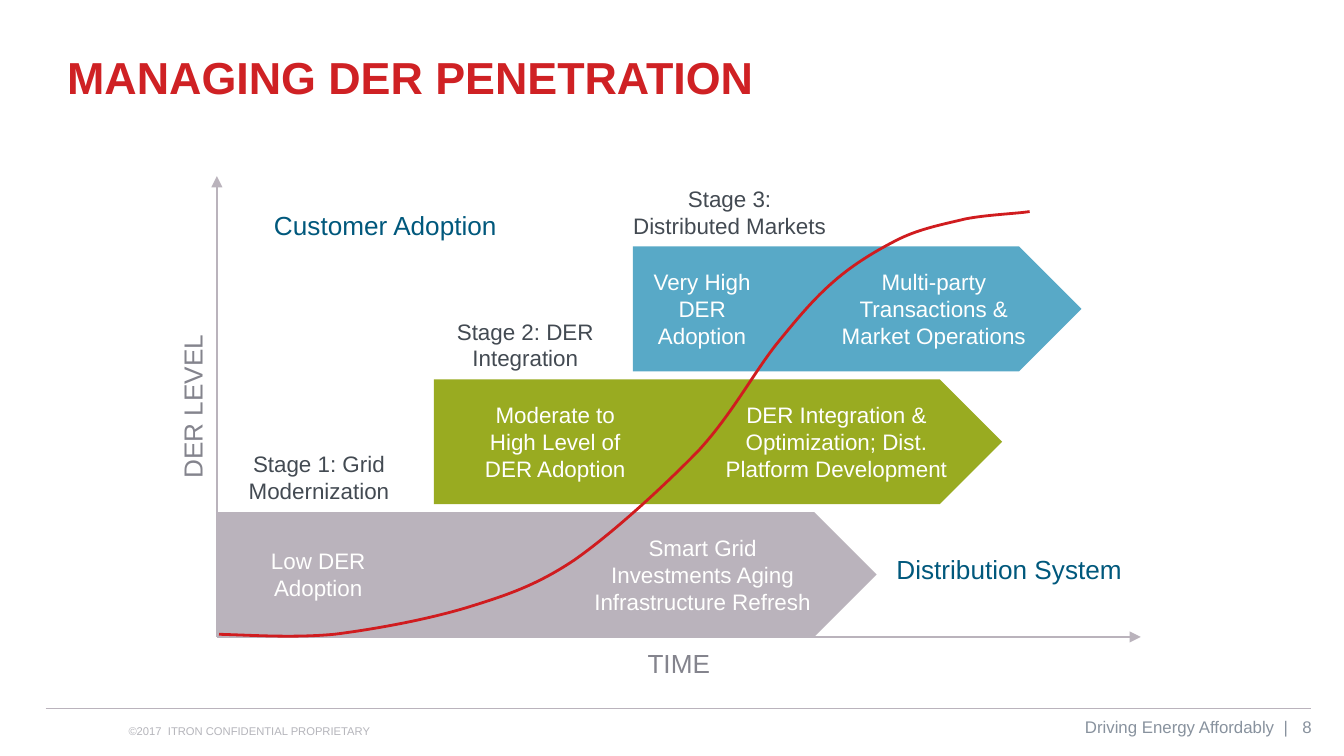
from lxml.etree import SubElement
from pptx import Presentation
from pptx.dml.color import RGBColor
from pptx.enum.shapes import MSO_CONNECTOR, MSO_SHAPE
from pptx.enum.text import MSO_ANCHOR, PP_ALIGN
from pptx.oxml.ns import qn
from pptx.util import Cm, Pt

HUES = {
    "title": "CF2124", "curve": "D01C1F", "gray": "BAB3BC", "green": "99AB21",
    "blue": "58A9C7", "white": "FFFFFE", "dark": "434A52", "teal": "00587C",
    "axis": "84848D", "foot": "88929E", "pale": "B5B5BB",
}
LEFT, MID, RIGHT = PP_ALIGN.LEFT, PP_ALIGN.CENTER, PP_ALIGN.RIGHT

# Text formats: size, hue, bold, alignment, anchor
STYLES = {
    "title": (24, "title", True, LEFT, MSO_ANCHOR.MIDDLE),
    "stage": (12, "dark", False, MID, MSO_ANCHOR.TOP),
    "step": (12, "white", False, MID, MSO_ANCHOR.MIDDLE),
    "note": (14, "teal", False, MID, MSO_ANCHOR.TOP),
    "axis": (14, "axis", False, MID, MSO_ANCHOR.TOP),
    "foot": (9, "foot", False, RIGHT, MSO_ANCHOR.MIDDLE),
    "legal": (6, "pale", False, LEFT, MSO_ANCHOR.TOP),
}

# Stages from the bottom up: hue, left, width, label (text, shift, width),
# steps (text, shift, width); shifts count from the left of the arrow
STAGES = [
    ("gray", 0, 12.47, ("Stage 1: Grid Modernization", 0.15, 3.56),
     [("Low DER Adoption", 0.05, 3.73),
      ("Smart Grid Investments Aging Infrastructure Refresh", 6.73, 4.9)]),
    ("green", 4.1, 10.74, ("Stage 2: DER Integration", -0.05, 3.56),
     [("Moderate to High Level of DER Adoption", 0.43, 3.73),
      ("DER Integration & Optimization; Dist. Platform Development", 5.16, 4.9)]),
    ("blue", 7.86, 8.48, ("Stage 3:\nDistributed Markets", -0.48, 4.62),
     [("Very High DER Adoption", -0.2, 3.02),
      ("Multi-party Transactions & Market Operations", 3.53, 4.32)]),
]
HIGH, PITCH = 2.36, 2.51  # arrow height and step between arrows

# Adoption curve: start, then two handles and an end for each Bezier piece
CURVE = [
    (0.04, 8.66),
    (0.73, 8.68), (1.44, 8.73), (2.22, 8.66),
    (3.01, 8.56), (3.98, 8.38), (4.74, 8.15),
    (5.48, 7.92), (6.03, 7.74), (6.75, 7.26),
    (7.48, 6.75), (8.45, 5.86), (9.11, 5.18),
    (9.74, 4.49), (10.15, 3.71), (10.58, 3.17),
    (11.01, 2.64), (11.29, 2.31), (11.67, 1.98),
    (12.05, 1.65), (12.49, 1.39), (12.89, 1.19),
    (13.3, 0.99), (13.73, 0.91), (14.14, 0.81),
    (14.54, 0.73), (15.1, 0.71), (15.36, 0.67),
]


def hue(name):
    return RGBColor.from_string(HUES[name])


def text(slide, words, style, x, y, w, h, turn=0):
    size, tint, bold, align, anchor = STYLES[style]
    box = slide.shapes.add_textbox(Cm(x), Cm(y), Cm(w), Cm(h))
    box.rotation = turn
    frame = box.text_frame
    para = frame.paragraphs[0]
    para.text = words
    para.alignment = align
    frame.word_wrap, frame.vertical_anchor = True, anchor
    form = {"name": "Arial", "size": Pt(size), "bold": bold}
    for run in para.runs:
        for key, value in form.items():
            setattr(run.font, key, value)
        run.font.color.rgb = hue(tint)


def rule(slide, x1, y1, x2, y2, width, arrow=False):
    line = slide.shapes.add_connector(
        MSO_CONNECTOR.STRAIGHT, Cm(x1), Cm(y1), Cm(x2), Cm(y2))
    line.line.color.rgb = hue("gray")
    line.line.width = Pt(width)
    if arrow:
        SubElement(line.line._get_or_add_ln(), qn("a:tailEnd"), type="triangle")
    SubElement(line._element.spPr, qn("a:effectLst"))


def stage(slide, x, y, tint, wide, label, steps):
    arrow = slide.shapes.add_shape(
        MSO_SHAPE.PENTAGON, Cm(x), Cm(y), Cm(wide), Cm(HIGH))
    arrow.shadow.inherit = False
    arrow.fill.solid()
    arrow.fill.fore_color.rgb = hue(tint)
    arrow.line.fill.background()
    words, shift, w = label
    text(slide, words, "stage", x + shift, y - 1.29, w, 1.27)
    for words, shift, w in steps:
        text(slide, words, "step", x + shift, y, w, HIGH)


def curve(slide, x, y):
    spots = [(Cm(x + a), Cm(y + b)) for a, b in CURVE]
    build = slide.shapes.build_freeform(*spots[0])
    build.add_line_segments(spots[1:], close=False)
    shape = build.convert_to_shape()
    shape.shadow.inherit = False
    shape.fill.background()
    shape.line.color.rgb = hue("curve")
    shape.line.width = Pt(1.5)
    # Join each three straight pieces into one Bezier piece
    legs = list(shape._element.iter(qn("a:lnTo")))
    for i in range(0, len(legs), 3):
        bend = SubElement(legs[i].getparent(), qn("a:cubicBezTo"))
        for leg in legs[i:i + 3]:
            bend.append(leg[0])
            leg.getparent().remove(leg)


def chart(slide, x, y, w, h):
    # Axes
    rule(slide, x, y + h, x, y, 1, True)
    rule(slide, x, y + h, x + w, y + h, 1, True)
    text(slide, "DER LEVEL", "axis", x - 0.46 - h / 2, y + h / 2 - 0.43, h, 0.86, 270)
    text(slide, "TIME", "axis", x, y + h + 0.08, w, 0.86)
    # Stages and curve
    for i, (tint, left, wide, label, steps) in enumerate(STAGES):
        stage(slide, x + left, y + h - HIGH - i * PITCH, tint, wide, label, steps)
    curve(slide, x, y)
    # Notes
    text(slide, "Customer Adoption", "note", x + 0.57, y + 0.51, 5.23, 0.86)
    text(slide, "Distribution System", "note", x + 12.36, y + 7.01, 5.23, 0.86)


def footer(slide, x, y, w):
    rule(slide, x, y, x + w, y, 0.5)
    text(slide, "©2017  ITRON CONFIDENTIAL PROPRIETARY", "legal", x + 1.32, y + 0.17, 7.54, 0.51)
    text(slide, "Driving Energy Affordably  |", "foot", x + 15.7, y - 0.03, 8.03, 0.76)
    text(slide, "8", "foot", x + w - 1.05, y - 0.03, 1.32, 0.76)


def main():
    deck = Presentation()
    deck.slide_width, deck.slide_height = Cm(25.4), Cm(14.29)
    slide = deck.slides.add_slide(deck.slide_layouts[6])
    text(slide, "MANAGING DER PENETRATION", "title", 1.02, 0.81, 22.86, 1.27)
    chart(slide, 4.1, 3.33, 17.46, 8.71)
    footer(slide, 0.86, 13.39, 23.91)
    deck.save("out.pptx")


if __name__ == "__main__":
    main()
